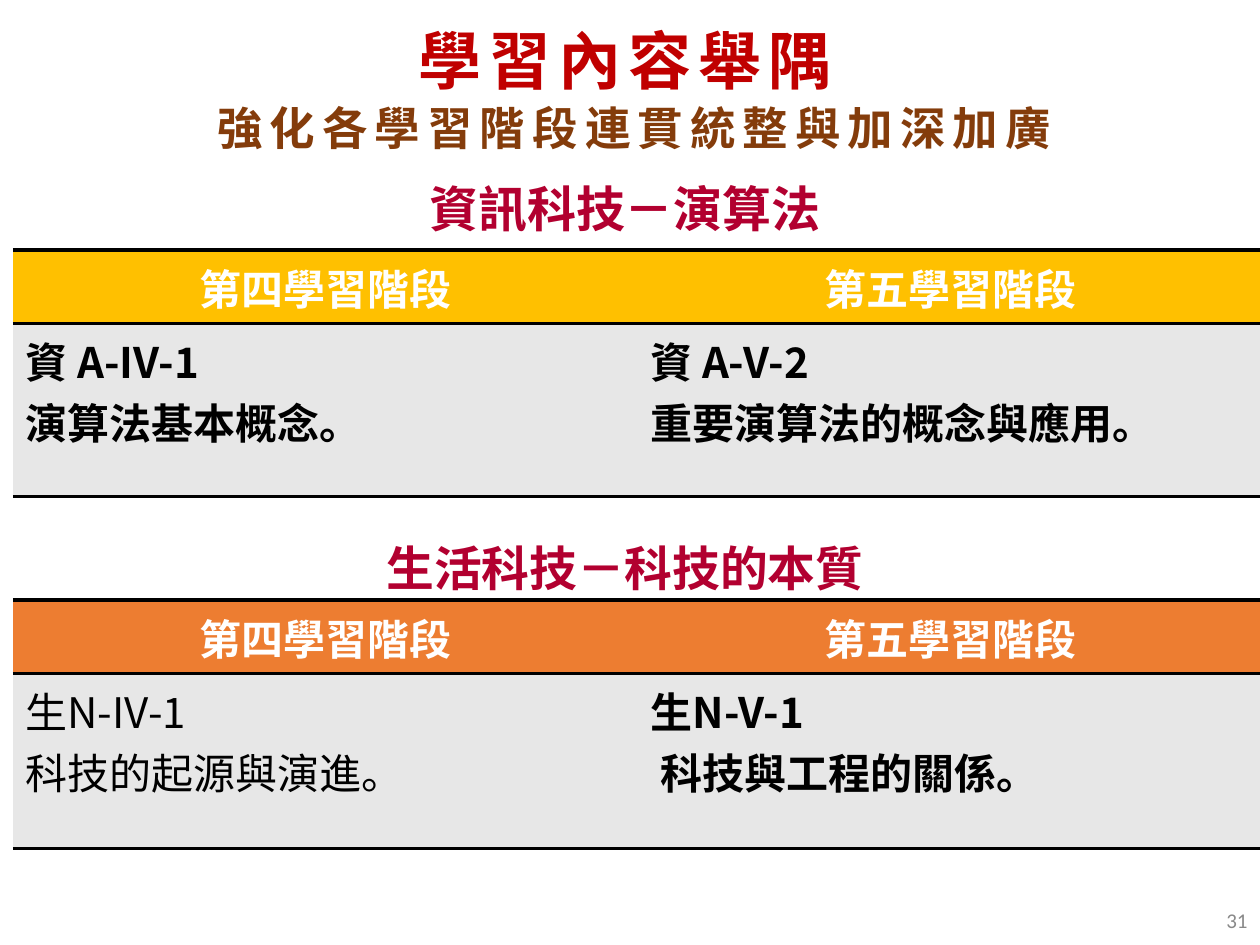
from lxml import etree
from pptx import Presentation
from pptx.dml.color import RGBColor
from pptx.enum.text import MSO_ANCHOR, MSO_AUTO_SIZE, PP_ALIGN
from pptx.oxml.ns import qn
from pptx.util import Emu, Pt

LEFT, CENTER, RIGHT = PP_ALIGN.LEFT, PP_ALIGN.CENTER, PP_ALIGN.RIGHT
TOP, MIDDLE = MSO_ANCHOR.TOP, MSO_ANCHOR.MIDDLE
NO_AUTOFIT = MSO_AUTO_SIZE.NONE

PX = 914400 // 126
WIDTH, HEIGHT = 1260, 945
CJK_FONT, LATIN_FONT = "Noto Sans CJK SC", "Calibri"
COLORS = {
    "title": "C00000", "subtitle": "843C0B", "heading": "B20030",
    "amber": "FFC000", "orange": "ED7D31", "body": "E7E7E7",
    "white": "FFFFFF", "black": "000000", "number": "898989",
}


class SlideBuilder:
    """Holds the text style and the slide being built."""

    def __init__(self, slide):
        self.slide = slide
        self.style = {"name": CJK_FONT, "size": Pt(24), "bold": True}

    def fill_text(self, frame, lines, color, align=LEFT, line_spacing=None,
                  tracking=0, **changes):
        """Fill a text frame with one paragraph per line."""
        style = {**self.style, **changes}
        for index, line in enumerate(lines):
            paragraph = frame.paragraphs[0] if index == 0 else frame.add_paragraph()
            paragraph.alignment = align
            paragraph.line_spacing = line_spacing
            run = paragraph.add_run()
            run.text = line
            for name, value in style.items():
                setattr(run.font, name, value)
            run.font.color.rgb = RGBColor.from_string(COLORS[color])
            properties = run.font._element
            etree.SubElement(properties, qn("a:ea"), typeface=style["name"])
            if tracking:
                properties.set("spc", str(tracking * 100))

    def place(self, shape, box, anchor):
        shape.left, shape.top, shape.width, shape.height = (Emu(v * PX) for v in box)
        frame = shape.text_frame
        settings = {"word_wrap": True, "auto_size": NO_AUTOFIT,
                    "vertical_anchor": anchor}
        for name, value in settings.items():
            setattr(frame, name, value)
        return frame

    def title(self, text, box, **formats):
        frame = self.place(self.slide.shapes.title, box, MIDDLE)
        self.fill_text(frame, [text], "title", CENTER, 0.9, **formats)

    def text(self, text, box, color, anchor=MIDDLE, **formats):
        shape = self.slide.shapes.add_textbox(0, 0, 0, 0)
        self.fill_text(self.place(shape, box, anchor), [text], color, **formats)

    def borders(self, cell, sides):
        """Draw black 2 pt lines on the given sides and none elsewhere."""
        properties = cell._tc.get_or_add_tcPr()
        for side in "LRTB":
            line = etree.SubElement(properties, qn(f"a:ln{side}"), w=str(Pt(2)))
            if side in sides:
                fill = etree.SubElement(line, qn("a:solidFill"))
                etree.SubElement(fill, qn("a:srgbClr"), val=COLORS["black"])
            else:
                etree.SubElement(line, qn("a:noFill"))

    def cell(self, cell, lines, fill, color, align, anchor, bold=True):
        self.borders(cell, "TB")
        cell.fill.solid()
        cell.fill.fore_color.rgb = RGBColor.from_string(COLORS[fill])
        cell.vertical_anchor = anchor
        self.fill_text(cell.text_frame, lines, color, align, bold=bold)

    def stage_table(self, top, row_heights, header_fill, columns):
        """Add a table with one (header, lines, bold) entry per column."""
        left, column_width = 13, 625
        box = (left, top, column_width * len(columns), sum(row_heights))
        table = self.slide.shapes.add_table(
            len(row_heights), len(columns), *(Emu(v * PX) for v in box)).table
        table.first_row = table.horz_banding = False
        for row, height in zip(table.rows, row_heights):
            row.height = Emu(height * PX)
        for index, (header, lines, bold) in enumerate(columns):
            self.cell(table.cell(0, index), [header], header_fill, "white",
                      CENTER, MIDDLE)
            self.cell(table.cell(1, index), lines, "body", "black",
                      LEFT, TOP, bold)


def main():
    presentation = Presentation()
    presentation.slide_width = Emu(WIDTH * PX)
    presentation.slide_height = Emu(HEIGHT * PX)
    title_only = presentation.slide_layouts[5]
    builder = SlideBuilder(presentation.slides.add_slide(title_only))

    # Title and subtitle
    builder.title("學習內容舉隅", (82, 20, 1086, 88), size=Pt(36), tracking=4)
    builder.text("強化各學習階段連貫統整與加深加廣", (205, 94, 866, 68), "subtitle",
                 TOP, size=Pt(26), tracking=4)

    # Section headings
    heading = {"color": "heading", "align": CENTER, "line_spacing": 0.9}
    builder.text("資訊科技－演算法", (82, 175, 1086, 74), size=Pt(28), **heading)
    builder.text("生活科技－科技的本質", (82, 513, 1086, 117), size=Pt(27.3), **heading)

    # Learning stage tables
    fourth, fifth = "第四學習階段", "第五學習階段"
    builder.stage_table(250, (73, 173), "amber", [
        (fourth, ["資 A-IV-1", "演算法基本概念。"], True),
        (fifth, ["資 A-V-2", "重要演算法的概念與應用。"], True),
    ])
    builder.stage_table(600, (73, 175), "orange", [
        (fourth, ["生N-IV-1", "科技的起源與演進。"], False),
        (fifth, ["生N-V-1", " 科技與工程的關係。"], True),
    ])

    # Slide number
    builder.text("31", (976, 895, 284, 50), "number", align=RIGHT,
                 name=LATIN_FONT, size=Pt(12), bold=False)

    presentation.save("out.pptx")


if __name__ == "__main__":
    main()
